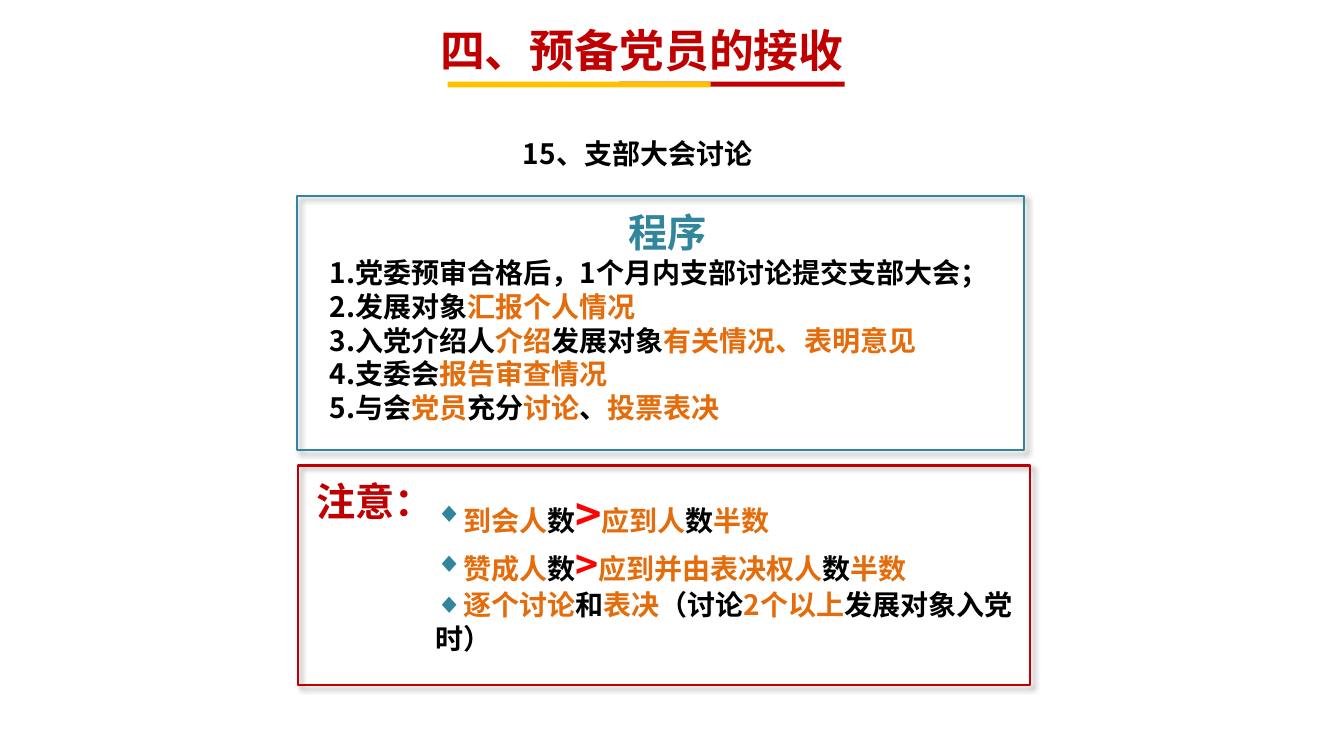
import pptx
import pptx.util
import pptx.dml.color
import pptx.enum.shapes
import pptx.enum.text
import pptx.oxml
import pptx.oxml.ns

Pt = pptx.util.Pt
COLORS = {
    "black": "000000",
    "orange": "E46C0A",
    "teal": "31859C",
    "crimson": "C00000",
    "red": "FF0000",
    "gold": "FFC000",
}
CJK_FONT = "Noto Sans CJK SC"
HEADING_FONT = "Arial"

TITLE = [[("四、预备党员的接收", "crimson", 32)]]
TOPIC = [[("15、支部大会讨论", "black", 20)]]
PROCEDURE_HEADING = [[("程序", "teal", 28)]]
NOTICE_HEADING = [[("注意：", "crimson", 28)]]
PROCEDURE_STEPS = [
    [("1.党委预审合格后，1个月内支部讨论提交支部大会；", "black", 20)],
    [("2.发展对象", "black", 20), ("汇报个人情况", "orange", 20)],
    [("3.入党介绍人", "black", 20), ("介绍", "orange", 20),
     ("发展对象", "black", 20), ("有关情况、表明意见", "orange", 20)],
    [("4.支委会", "black", 20), ("报告审查情况", "orange", 20)],
    [("5.与会", "black", 20), ("党员", "orange", 20), ("充分", "black", 20),
     ("讨论", "orange", 20), ("、", "black", 20), ("投票表决", "orange", 20)],
]
NOTICE_RULES = [
    [("到会人", "orange", 20), ("数", "black", 20), (">", "red", 32),
     ("应到人", "orange", 20), ("数", "black", 20), ("半数", "orange", 20)],
    [("赞成人", "orange", 20), ("数", "black", 20), (">", "red", 28),
     ("应到并由表决权人", "orange", 20), ("数", "black", 20), ("半数", "orange", 20)],
    [("逐个讨论", "orange", 20), ("和", "black", 20), ("表决", "orange", 20),
     ("（讨论", "black", 20), ("2个以上", "orange", 20),
     ("发展对象入党时）", "black", 20)],
]


def rgb(color):
    return pptx.dml.color.RGBColor.from_string(COLORS[color])


def xml_element(markup):
    return pptx.oxml.parse_xml(
        markup.replace(" ", f" {pptx.oxml.ns.nsdecls('a')} ", 1))


def set_attributes(target, values):
    for name, value in values.items():
        setattr(target, name, value)


def add_run(paragraph, words, color, size, font_name):
    run = paragraph.add_run()
    run.text = words
    set_attributes(run.font, {"size": Pt(size), "bold": True, "name": font_name})
    run.font.color.rgb = rgb(color)
    run.font._element.append(xml_element(f'<a:ea typeface="{CJK_FONT}"/>'))


def add_diamond_bullet(paragraph):
    properties = paragraph._p.get_or_add_pPr()
    set_bullet = [
        f'<a:buClr ><a:srgbClr val="{COLORS["teal"]}"/></a:buClr>',
        '<a:buFont typeface="Arial"/>',
        '<a:buChar char="◆"/>',
    ]
    for name in ("marL", "indent"):
        properties.set(name, "0")
    for markup in set_bullet:
        properties.append(xml_element(markup))


def add_text(shapes, bounds, paragraphs, font_name=CJK_FONT, align=None,
             bulleted=False, grows=True):
    frame = shapes.add_textbox(*map(Pt, bounds)).text_frame
    sizing = pptx.enum.text.MSO_AUTO_SIZE
    set_attributes(frame, {
        "word_wrap": True,
        "auto_size": sizing.SHAPE_TO_FIT_TEXT if grows else sizing.NONE,
    })
    for index, runs in enumerate(paragraphs):
        paragraph = frame.add_paragraph() if index else frame.paragraphs[0]
        paragraph.alignment = align
        if bulleted:
            add_diamond_bullet(paragraph)
        for words, color, size in runs:
            add_run(paragraph, words, color, size, font_name)


def add_rectangle(shapes, bounds):
    rectangle = shapes.add_shape(
        pptx.enum.shapes.MSO_SHAPE.RECTANGLE, *map(Pt, bounds))
    rectangle.shadow.inherit = False
    return rectangle


def add_bar(shapes, bounds, color):
    bar = add_rectangle(shapes, bounds)
    bar.fill.solid()
    bar.fill.fore_color.rgb = rgb(color)
    bar.line.fill.background()


def add_frame(shapes, bounds, color):
    frame = add_rectangle(shapes, bounds)
    frame.fill.background()
    frame.line.color.rgb = rgb(color)
    frame.line.width = Pt(1.5)
    effects = frame._element.spPr.find(pptx.oxml.ns.qn("a:effectLst"))
    effects.append(xml_element(
        f'<a:outerShdw blurRad="{Pt(4)}" dist="{Pt(3)}" dir="2700000" '
        'algn="tl" rotWithShape="0"><a:srgbClr val="000000">'
        '<a:alpha val="40000"/></a:srgbClr></a:outerShdw>'))


def main():
    deck = pptx.Presentation()
    set_attributes(deck, {"slide_width": Pt(960), "slide_height": Pt(540)})
    slide = deck.slides.add_slide(deck.slide_layouts[6])

    procedure = slide.shapes.add_group_shape().shapes
    add_text(procedure, (442, 145.5, 95, 41), PROCEDURE_HEADING, HEADING_FONT)
    add_frame(procedure, (212, 140, 519.5, 181.5), "teal")
    add_text(procedure, (228.3, 179.3, 489.6, 128.2), PROCEDURE_STEPS)

    notice = slide.shapes.add_group_shape().shapes
    add_text(notice, (219, 337.7, 123, 41), NOTICE_HEADING, HEADING_FONT)
    add_frame(notice, (213, 332.5, 522.7, 156.5), "crimson")
    add_text(slide.shapes, (303.8, 344.2, 436.3, 128.2), NOTICE_RULES,
             bulleted=True)

    header = slide.shapes.add_group_shape().shapes
    add_text(header, (206.6, 13, 504, 67.7), TITLE,
             align=pptx.enum.text.PP_ALIGN.CENTER, grows=False)
    add_bar(header, (442, 58.3, 161.3, 3.6), "crimson")
    add_bar(header, (319.7, 58.3, 188, 4.2), "gold")

    add_text(slide.shapes, (366.5, 94.3, 242.6, 31.7), TOPIC)
    deck.save("out.pptx")


if __name__ == "__main__":
    main()
